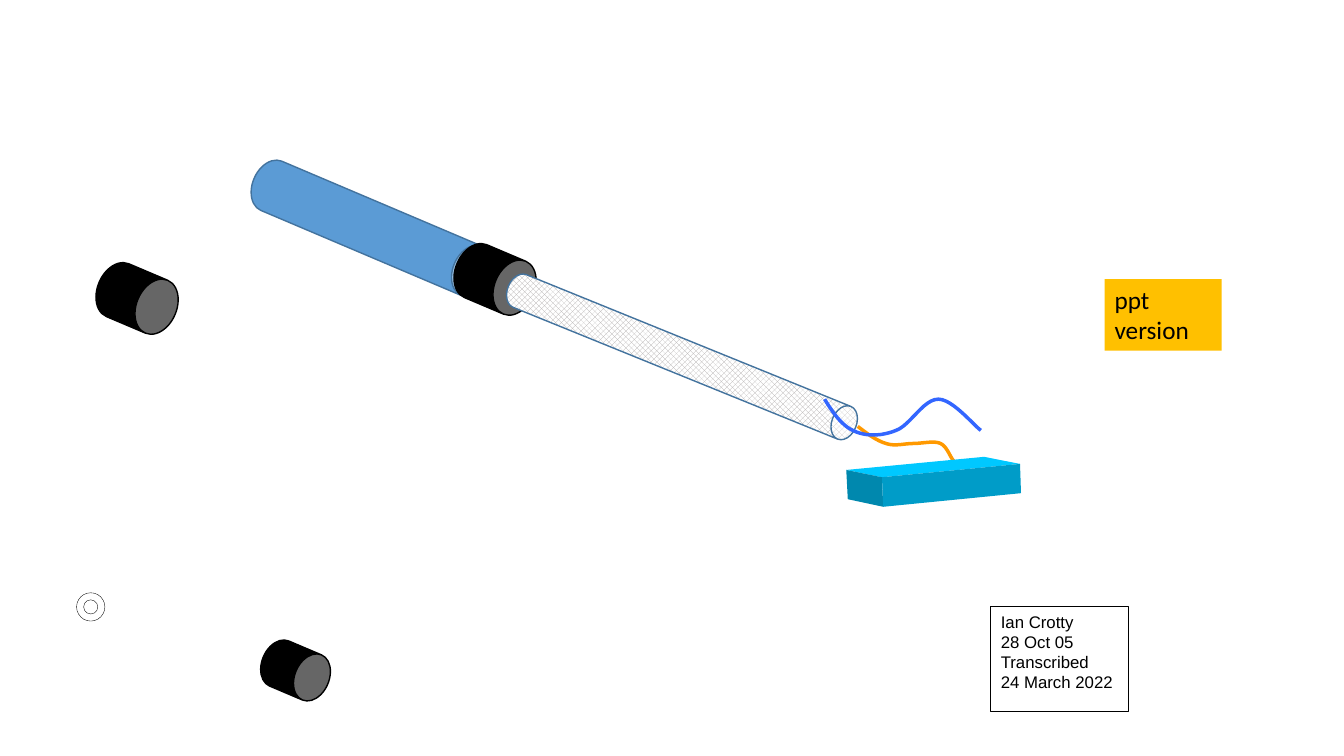
import dataclasses
import pptx
import pptx.dml.color
import pptx.enum.dml
import pptx.enum.shapes
import pptx.enum.text
import pptx.util

Pt = pptx.util.Pt
KIND = pptx.enum.shapes.MSO_SHAPE
Point = tuple[float, float]

HEX = {
    "black": "000000", "white": "FFFFFF", "gold": "FFC000", "blue": "5B9BD5",
    "edge": "43739E", "mesh": "AFABAB", "orange": "FF9900", "wire": "3366FF",
    "top": "00C8FF", "front": "009CC8", "side": "0088AE",
}


@dataclasses.dataclass
class Tube:
    """A tilted can, placed by its centre."""
    mid: Point
    wide: float
    long: float
    fill: str
    edge: str
    turn: float = 113


@dataclasses.dataclass
class Wire:
    """A chain of cubic curves: a start, then three points a curve."""
    dots: list[Point]
    tint: str


@dataclasses.dataclass
class Face:
    dots: list[Point]
    tint: str


@dataclasses.dataclass
class Label:
    box: tuple[float, float, float, float]
    lines: list[str]
    font: str
    size: float
    fill: str
    edge: str | None


COLLAR = Tube((97.9, 213.2), 41, 59, "black", "black")
PLUG = Tube((211.1, 478.9), 35, 50, "black", "black")
ROD = [
    Tube((265.3, 163.1), 38.2, 182.2, "blue", "edge"),
    dataclasses.replace(COLLAR, mid=(353.6, 199.6)),
    Tube((487.1, 254.9), 25.2, 267.8, "mesh", "edge", 112.1),
]
LEAD = Wire([
    (612.7, 304.6), (619.2, 309.6), (625.7, 314.6), (632.9, 316.8),
    (639.4, 319), (645.8, 316.8), (652.3, 316.8),
    (658.8, 316.8), (667.4, 314.6), (671.8, 316.8),
    (676.8, 319), (679, 327.6), (681.8, 329.8),
    (685.4, 331.2), (688.3, 330.5), (691.9, 329.8)], "orange")
LOOP = Wire([
    (589, 285.1), (594.7, 294.5), (601.2, 303.8), (609.1, 307.4),
    (617.8, 311.8), (629.3, 311.8), (640.1, 307.4),
    (650.2, 303.8), (659.5, 285.1), (670.3, 285.1),
    (680.4, 285.1), (695.5, 303.8), (700.6, 307.4)], "wire")

# Corners of the block: left, back, right and near, above and below
LEFT, BACK, RIGHT, NEAR = (604.5, 335.7), (703, 326.3), (728.6, 331.4), (630, 340.9)
LOW_LEFT, LOW_RIGHT, LOW_NEAR = (605.6, 356.6), (729.3, 352.3), (630.9, 362)
BLOCK = [
    Face([LEFT, BACK, RIGHT, NEAR], "top"),
    Face([LEFT, NEAR, LOW_NEAR, LOW_LEFT], "side"),
    Face([NEAR, RIGHT, LOW_RIGHT, LOW_NEAR], "front"),
]
LABELS = [
    Label((707.8, 433.4, 98.6, 74.9),
          ["Ian Crotty", "28 Oct 05", "Transcribed", "24 March 2022"],
          "Arial", 12, "white", "black"),
    Label((789.1, 199.4, 83.5, 51.1), ["ppt version"], "Calibri", 18, "gold", None),
]


def tint(name: str) -> pptx.dml.color.RGBColor:
    return pptx.dml.color.RGBColor.from_string(HEX[name])


def style(shape, fill: str | None, edge: str | None, width: float = 1) -> None:
    shape.shadow.inherit = False
    if fill == "mesh":
        shape.fill.patterned()
        shape.fill.pattern = pptx.enum.dml.MSO_PATTERN.OUTLINED_DIAMOND
        shape.fill.fore_color.rgb = tint("mesh")
        shape.fill.back_color.rgb = tint("white")
    elif fill:
        shape.fill.solid()
        shape.fill.fore_color.rgb = tint(fill)
    else:
        shape.fill.background()
    if edge:
        shape.line.color.rgb = tint(edge)
        shape.line.width = Pt(width)
    else:
        shape.line.fill.background()


def add_tube(shapes, tube: Tube) -> None:
    x, y = tube.mid
    can = shapes.add_shape(KIND.CAN, Pt(x - tube.wide / 2), Pt(y - tube.long / 2),
                           Pt(tube.wide), Pt(tube.long))
    can.adjustments[0] = 0.7
    can.rotation = tube.turn
    style(can, tube.fill, tube.edge)


def trace(shapes, dots: list[Point], close: bool):
    """Join the points with short straight lines."""
    spots = [(Pt(x), Pt(y)) for x, y in dots]
    pen = shapes.build_freeform(*spots[0])
    pen.add_line_segments(spots[1:], close=close)
    return pen.convert_to_shape()


def bend(dots: list[Point], steps: int = 12) -> list[Point]:
    """Points along a chain of cubic curves."""
    curve = [dots[0]]
    for start in range(0, len(dots) - 1, 3):
        quad = dots[start:start + 4]
        for step in range(1, steps + 1):
            t = step / steps
            u = 1 - t
            rates = (u ** 3, 3 * u * u * t, 3 * u * t * t, t ** 3)
            curve.append((sum(r * p[0] for r, p in zip(rates, quad)),
                          sum(r * p[1] for r, p in zip(rates, quad))))
    return curve


def add_wire(shapes, wire: Wire) -> None:
    style(trace(shapes, bend(wire.dots), False), None, wire.tint, 2.5)


def add_face(shapes, face: Face) -> None:
    style(trace(shapes, face.dots, True), face.tint, None)


def add_label(shapes, label: Label) -> None:
    box = shapes.add_textbox(*map(Pt, label.box))
    style(box, label.fill, label.edge, 0.75)
    frame = box.text_frame
    frame.word_wrap = True
    frame.vertical_anchor = pptx.enum.text.MSO_ANCHOR.TOP
    frame.text = "\n".join(label.lines)
    for para in frame.paragraphs:
        para.font.name = label.font
        para.font.size = Pt(label.size)
        para.font.color.rgb = tint("black")


def add_ring(shapes) -> None:
    ring = shapes.add_shape(KIND.DONUT, Pt(54.7), Pt(423.4), Pt(20.2), Pt(20.2))
    ring.adjustments[0] = 0.25
    style(ring, None, "black", 0.25)


def main() -> None:
    deck = pptx.Presentation()
    deck.slide_width, deck.slide_height = Pt(960), Pt(540)
    shapes = deck.slides.add_slide(deck.slide_layouts[6]).shapes
    add_tube(shapes, COLLAR)
    add_tube(shapes, PLUG)
    for label in LABELS:
        add_label(shapes, label)
    add_ring(shapes)
    for tube in ROD:
        add_tube(shapes, tube)
    add_wire(shapes, LEAD)
    for face in BLOCK:
        add_face(shapes, face)
    add_wire(shapes, LOOP)
    deck.save("out.pptx")


if __name__ == "__main__":
    main()
